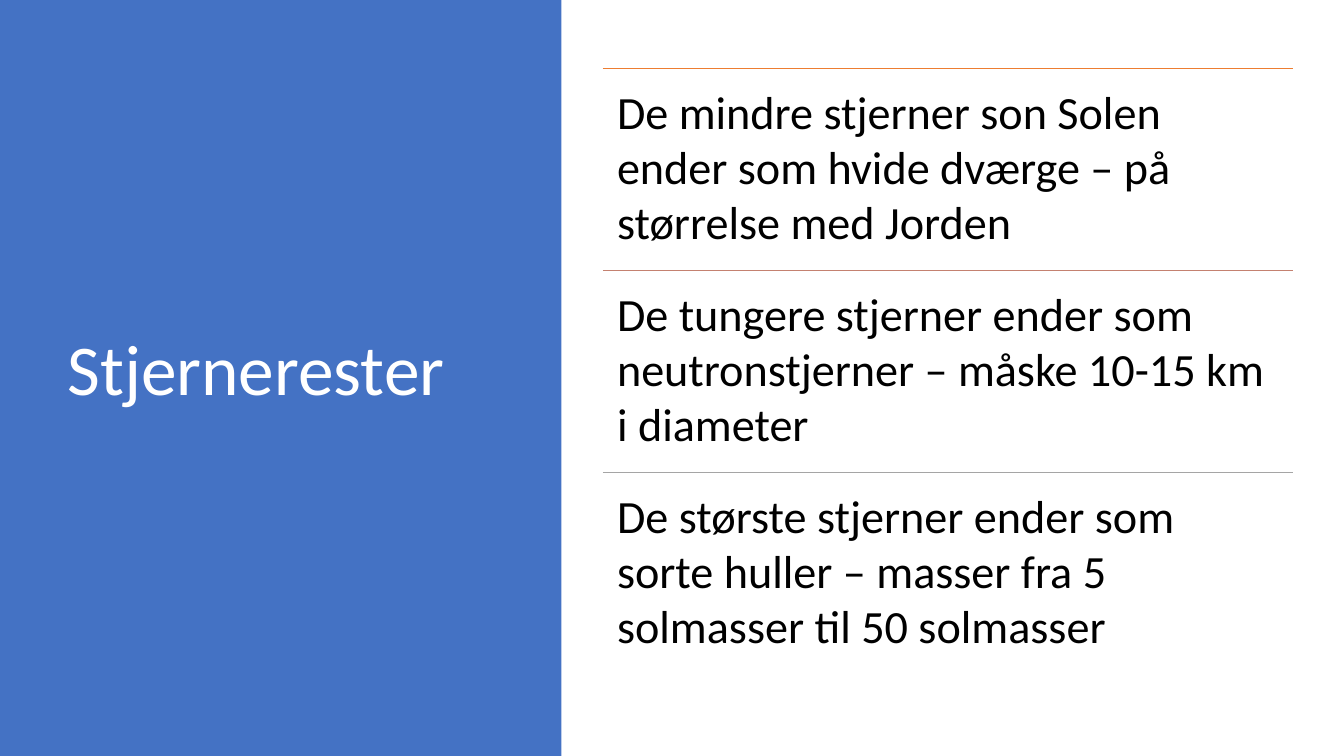
from pptx import Presentation
from pptx.dml.color import RGBColor
from pptx.enum.shapes import MSO_CONNECTOR, MSO_SHAPE
from pptx.enum.text import MSO_ANCHOR
from pptx.oxml.ns import qn
from pptx.util import Cm, Pt
from lxml import etree

RECT = MSO_SHAPE.RECTANGLE
LINE = MSO_CONNECTOR.STRAIGHT
TOP, MIDDLE = MSO_ANCHOR.TOP, MSO_ANCHOR.MIDDLE

BLUE = RGBColor(0x44, 0x72, 0xC4)
ORANGE = RGBColor(0xED, 0x7D, 0x31)
ROSE = RGBColor(0xC4, 0x81, 0x70)
GRAY = RGBColor(0xA5, 0xA5, 0xA5)
WHITE = RGBColor(0xFF, 0xFF, 0xFF)
BLACK = RGBColor(0, 0, 0)

WIDE, HIGH = 33.87, 19.05
LEFT, UPPER, SPAN, STEP = 15.19, 1.73, 17.4, 5.09

ROWS = [
    (ORANGE, "De mindre stjerner son Solen ender som hvide dværge – på størrelse med Jorden"),
    (ROSE, "De tungere stjerner ender som neutronstjerner – måske 10-15 km i diameter"),
    (GRAY, "De største stjerner ender som sorte huller – masser fra 5 solmasser til 50 solmasser"),
]


class Painter:
    """Draws styled elements on the current slide."""

    def __init__(self, slide, font):
        self.shapes = slide.shapes
        self.font = font

    def panel(self, x, y, w, h, color):
        panel = self.shapes.add_shape(RECT, Cm(x), Cm(y), Cm(w), Cm(h))
        panel.shadow.inherit = False
        panel.fill.solid()
        panel.fill.fore_color.rgb = color
        panel.line.fill.background()

    def rule(self, x, y, w, color):
        rule = self.shapes.add_connector(LINE, Cm(x), Cm(y), Cm(x + w), Cm(y))
        rule.line.color.rgb = color
        rule.line.width = Pt(1)
        etree.SubElement(rule._element.spPr, qn("a:effectLst"))

    def text(self, x, y, w, h, words, size, color, anchor=TOP, pad=0.36, lead=1.0):
        frame = self.shapes.add_textbox(Cm(x), Cm(y), Cm(w), Cm(h)).text_frame
        frame.word_wrap = True
        frame.vertical_anchor = anchor
        frame.margin_left = frame.margin_right = Cm(pad)
        frame.margin_top = frame.margin_bottom = Cm(pad)
        frame.text = words
        para = frame.paragraphs[0]
        para.line_spacing = lead
        font = para.runs[0].font
        font.name = self.font
        font.size = Pt(size)
        font.color.rgb = color


def main():
    deck = Presentation()
    deck.slide_width, deck.slide_height = Cm(WIDE), Cm(HIGH)
    draw = Painter(deck.slides.add_slide(deck.slide_layouts[6]), "Calibri")
    draw.panel(0, 0, 14.15, HIGH, BLUE)
    draw.text(1.45, UPPER, 10.57, 15.29, "Stjernerester", 51, WHITE, MIDDLE, 0.25, 0.9)
    for row, (color, words) in enumerate(ROWS):
        y = UPPER + row * STEP
        draw.rule(LEFT, y, SPAN, color)
        draw.text(LEFT, y, SPAN, STEP, words, 33, BLACK)
    deck.save("out.pptx")


if __name__ == "__main__":
    main()
